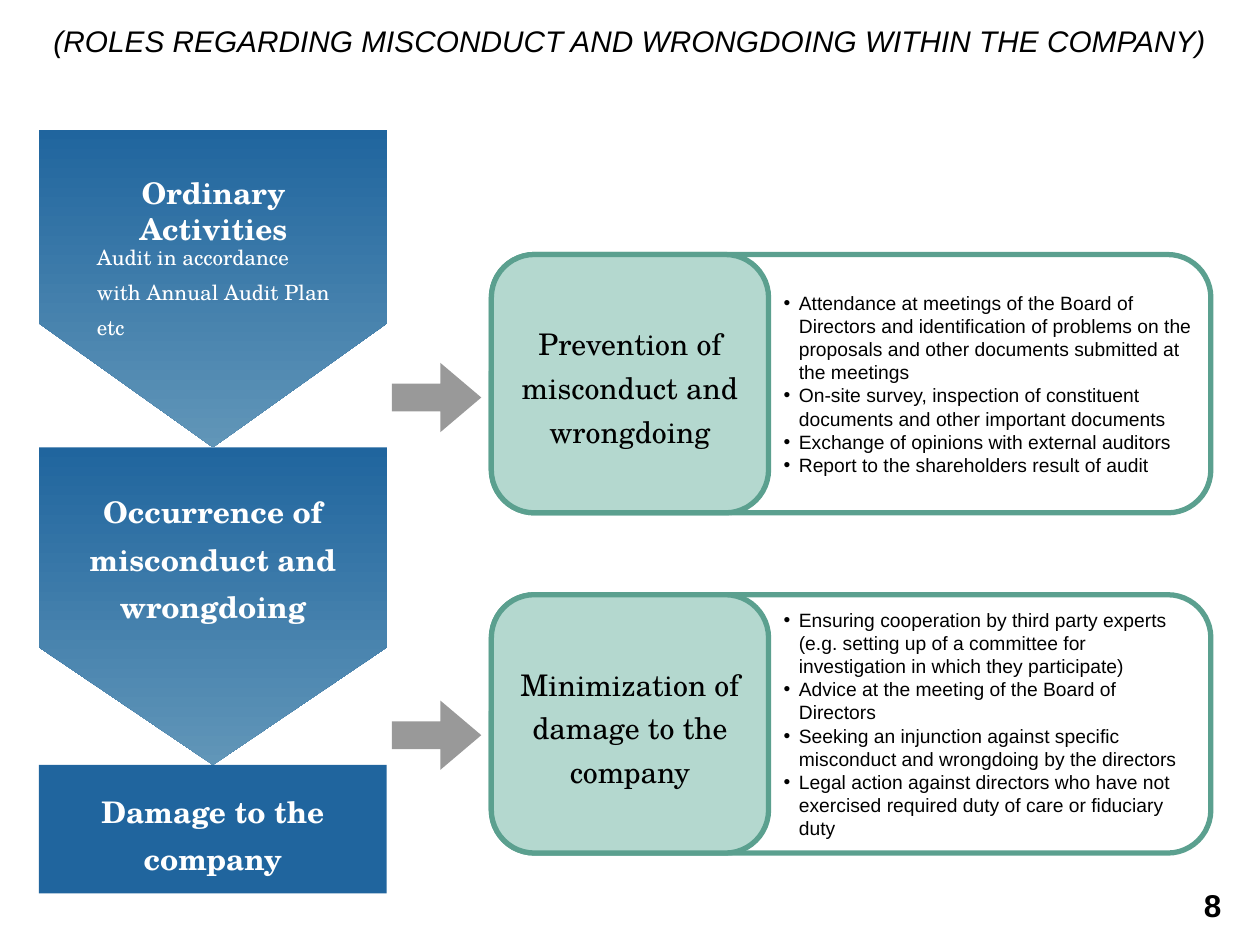
from pptx import Presentation
from pptx.dml.color import RGBColor
from pptx.enum.shapes import MSO_SHAPE
from pptx.enum.text import MSO_ANCHOR, MSO_AUTO_SIZE, PP_ALIGN
from pptx.util import Inches, Pt

CENTER, LEFT = PP_ALIGN.CENTER, PP_ALIGN.LEFT
TOP, MIDDLE = MSO_ANCHOR.TOP, MSO_ANCHOR.MIDDLE
NO_AUTOFIT = MSO_AUTO_SIZE.NONE
ROUNDED, RECTANGLE = MSO_SHAPE.ROUNDED_RECTANGLE, MSO_SHAPE.RECTANGLE
PENTAGON, ARROW = MSO_SHAPE.PENTAGON, MSO_SHAPE.RIGHT_ARROW

SANS, SERIF = "Arial", "TeX Gyre Schola"
BLUE, LIGHT_BLUE = "20659E", "6196B8"
GREEN, MINT, GRAY = "5BA08F", "B4D8CF", "999999"
BLACK, WHITE = "000000", "FFFFFF"

TITLE = "(ROLES REGARDING MISCONDUCT AND WRONGDOING WITHIN THE COMPANY)"
PAGE_NUMBER = "8"
STAGE_TIPS = [0.39, 0.37]
STAGE_TEXTS = [
    ("Ordinary Activities", (0.49, 1.35, 2.41, 0.6), CENTER, 17, True, None),
    ("Audit in accordance with Annual Audit Plan etc",
     (0.73, 1.82, 1.93, 0.92), LEFT, 12, False, 20),
    ("Occurrence of misconduct and wrongdoing",
     (0.31, 3.79, 2.76, 1.22), CENTER, 17, True, 27),
]
FINAL_STAGE = "Damage to the company"
RESPONSES = [
    ("Prevention of misconduct and wrongdoing", 3.39, [
        "Attendance at meetings of the Board of Directors and identification of "
        "problems on the proposals and other documents submitted at the meetings",
        "On-site survey, inspection of constituent documents and other important documents",
        "Exchange of opinions with external auditors",
        "Report to the shareholders result of audit",
    ]),
    ("Minimization of damage to the company", 3.31, [
        "Ensuring cooperation by third party experts (e.g. setting up of a "
        "committee for investigation in which they participate)",
        "Advice at the meeting of the Board of Directors",
        "Seeking an injunction against specific misconduct and wrongdoing by the directors",
        "Legal action against directors who have not exercised required duty of "
        "care or fiduciary duty",
    ]),
]

STAGE_LEFT, STAGE_TOP, STAGE_WIDTH, STAGE_HEIGHT = 0.31, 1.03, 2.76, 2.52
FINAL_HEIGHT = 1.02
PANEL_LEFT, PANEL_TOP, PANEL_WIDTH, PANEL_HEIGHT = 3.9, 2.02, 5.71, 2.05
PANEL_STEP, LABEL_WIDTH, LIST_LEFT = 2.7, 2.2, 6.18
ARROW_LEFT, ARROW_TOP, ARROW_WIDTH, ARROW_HEIGHT = 3.11, 2.88, 0.71, 0.55
ARROW_STEP = 2.68

prs = Presentation()
prs.slide_width, prs.slide_height = Inches(10), Inches(7.5)
slide = prs.slides.add_slide(prs.slide_layouts[3])


def rgb(color):
    return RGBColor.from_string(color)


def place(shape, box):
    shape.left, shape.top, shape.width, shape.height = map(Inches, box)


def write(shape, lines, size, color, font=SERIF, align=CENTER, bold=False,
          italic=False, spacing=None, anchor=MIDDLE, inset=0.04):
    frame = shape.text_frame
    frame.text = "\n".join(lines)
    frame.word_wrap = True
    frame.auto_size = NO_AUTOFIT
    frame.vertical_anchor = anchor
    frame.margin_left = frame.margin_right = Inches(inset)
    frame.margin_top = frame.margin_bottom = Inches(0.04)
    for paragraph in frame.paragraphs:
        paragraph.alignment = align
        paragraph.space_before = Pt(0)
        if spacing:
            paragraph.line_spacing = Pt(spacing)
        for run in paragraph.runs:
            run.font.name, run.font.size = font, Pt(size)
            run.font.bold, run.font.italic = bold, italic
            run.font.color.rgb = rgb(color)


def add_text(box, *args, **style):
    write(slide.shapes.add_textbox(*map(Inches, box)), *args, **style)


def add_block(kind, box, fill=None, line=None, adjustments=()):
    block = slide.shapes.add_shape(kind, *map(Inches, box))
    block.shadow.inherit = False
    if fill:
        block.fill.solid()
        block.fill.fore_color.rgb = rgb(fill)
    else:
        block.fill.background()
    if line:
        block.line.color.rgb = rgb(line)
        block.line.width = Pt(3)
    else:
        block.line.fill.background()
    for index, value in enumerate(adjustments):
        block.adjustments[index] = value
    return block


def add_stage(row, tip):
    shift = (STAGE_WIDTH - STAGE_HEIGHT) / 2
    box = (STAGE_LEFT + shift, STAGE_TOP + row * STAGE_HEIGHT - shift,
           STAGE_HEIGHT, STAGE_WIDTH)
    stage = add_block(PENTAGON, box, adjustments=[tip])
    stage.rotation = 90
    stage.fill.gradient()
    stage.fill.gradient_angle = 0
    for stop, color, position in zip(stage.fill.gradient_stops, (BLUE, LIGHT_BLUE), (0, 1)):
        stop.color.rgb = rgb(color)
        stop.position = position


def add_response(row, label, list_width, duties, body):
    top = PANEL_TOP + row * PANEL_STEP
    add_block(ROUNDED, (PANEL_LEFT, top, PANEL_WIDTH, PANEL_HEIGHT), line=GREEN)
    label_box = add_block(ROUNDED, (PANEL_LEFT, top, LABEL_WIDTH, PANEL_HEIGHT), MINT, GREEN)
    write(label_box, [label], 17, BLACK, spacing=25)
    add_block(ARROW, (ARROW_LEFT, ARROW_TOP + row * ARROW_STEP, ARROW_WIDTH, ARROW_HEIGHT),
              GRAY, adjustments=[0.4, 0.59])
    place(body, (LIST_LEFT, top, list_width, PANEL_HEIGHT))
    write(body, duties, 11, BLACK, SANS, LEFT)
    for paragraph in body.text_frame.paragraphs:
        properties = paragraph._p.get_or_add_pPr()
        properties.set("marL", str(Inches(0.12)))
        properties.set("indent", str(-Inches(0.12)))


title, *bodies = slide.placeholders
place(title, (0, 0.13, 10, 0.39))
write(title, [TITLE], 17, BLACK, SANS, italic=True, inset=0.1)

for row, tip in enumerate(STAGE_TIPS):
    add_stage(row, tip)
for text, box, align, size, bold, spacing in STAGE_TEXTS:
    add_text(box, [text], size, WHITE, align=align, bold=bold, spacing=spacing, anchor=TOP)

final_top = STAGE_TOP + len(STAGE_TIPS) * STAGE_HEIGHT
final = add_block(RECTANGLE, (STAGE_LEFT, final_top, STAGE_WIDTH, FINAL_HEIGHT), BLUE)
write(final, [FINAL_STAGE], 17, WHITE, bold=True, spacing=27)

for row, (response, body) in enumerate(zip(RESPONSES, bodies)):
    add_response(row, *response, body)

add_text((9.25, 6.98, 0.75, 0.4), [PAGE_NUMBER], 18, BLACK, font=SANS, bold=True)

prs.save("out.pptx")
